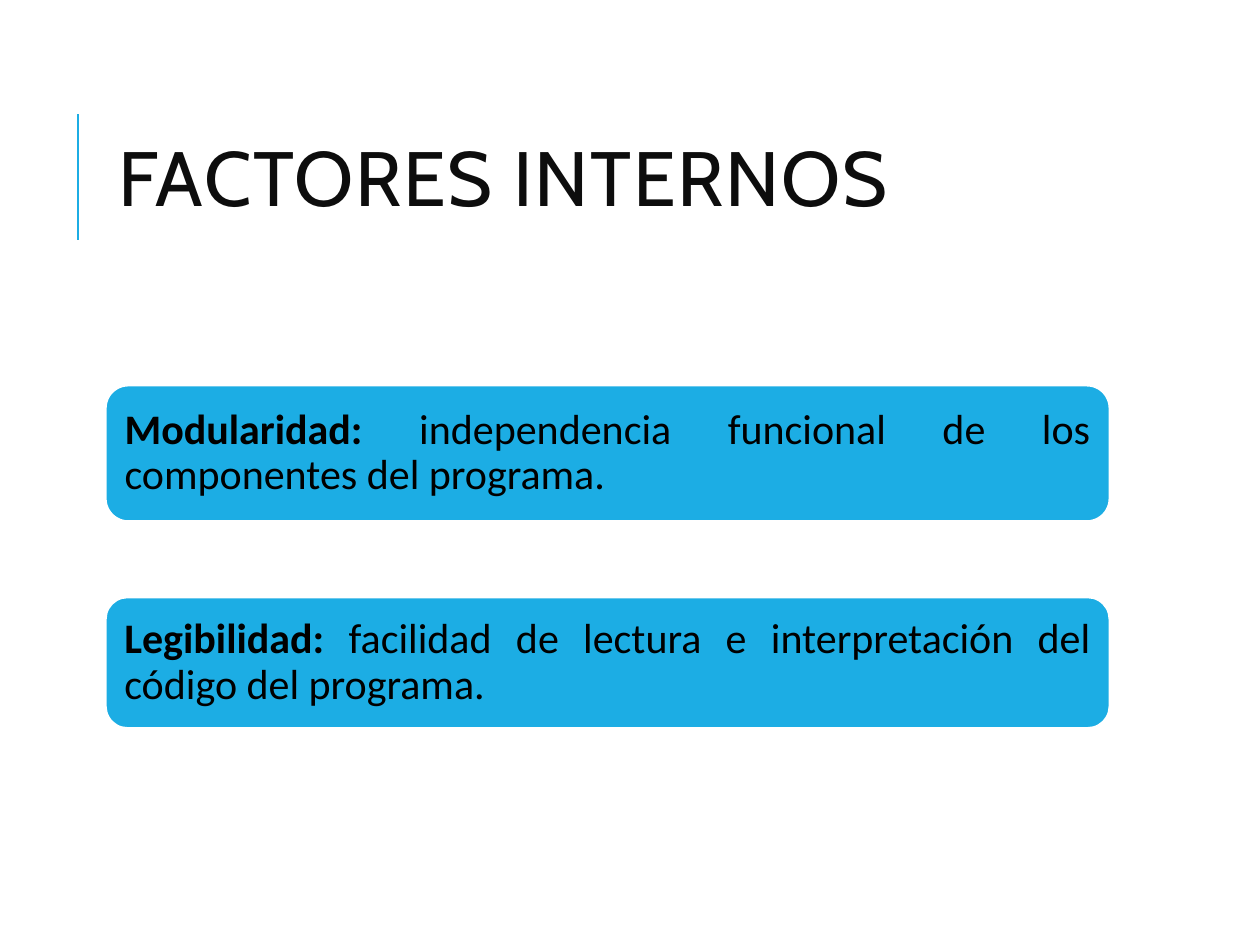
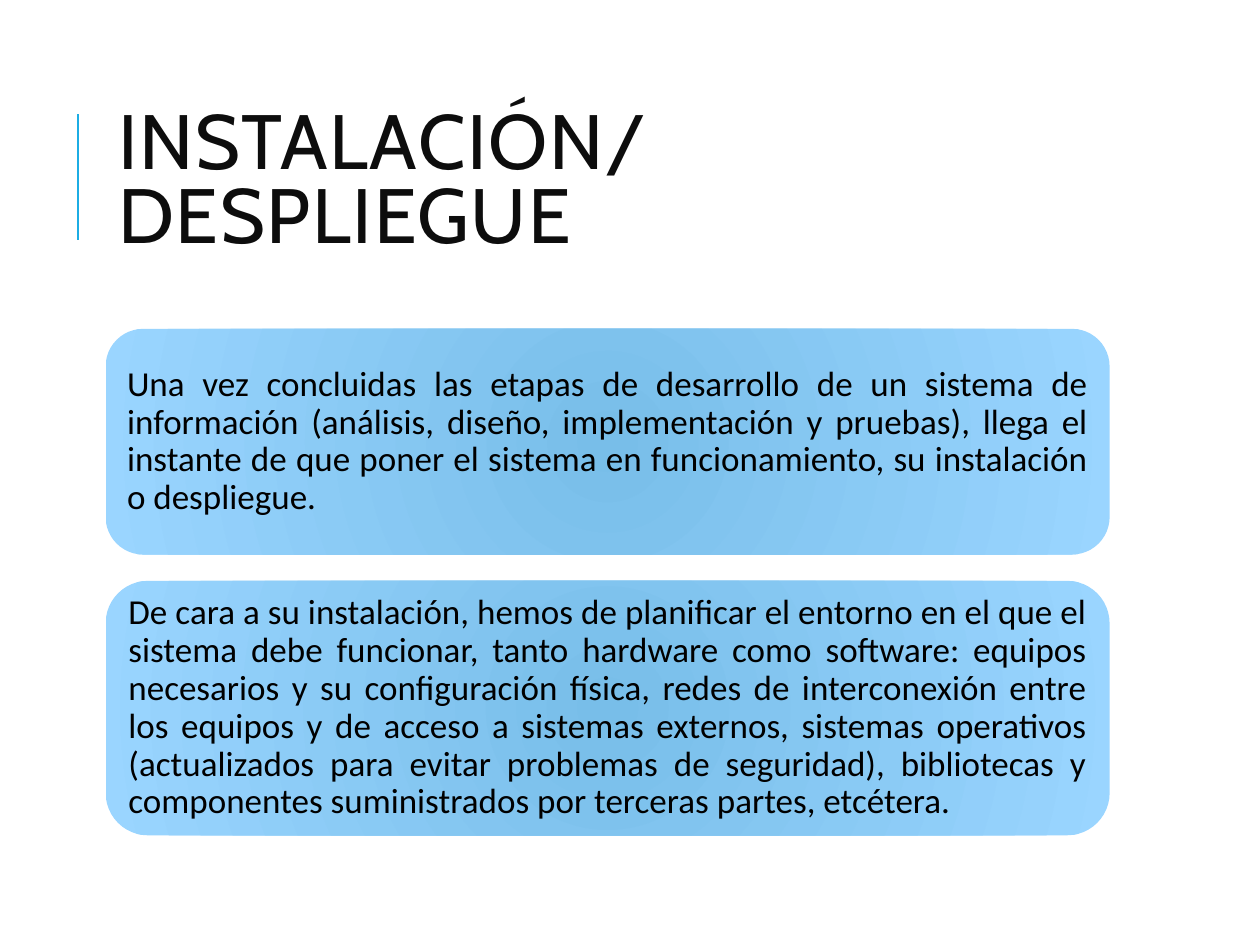
from lxml.etree import SubElement
from pptx import Presentation
from pptx.dml.color import RGBColor as RGB
from pptx.enum.shapes import MSO_CONNECTOR as CONN, MSO_SHAPE as SHAPE
from pptx.enum.text import MSO_ANCHOR as ANCHOR, PP_ALIGN as ALIGN
from pptx.oxml.ns import qn
from pptx.util import Cm, Pt

COLORS = {
    "accent": "1CADE4",
    "title": "0D0D0D",
    "text": "000000",
    "edge": "FFFFFF",
    "glow_center": "78BEE9",
    "glow_rim": "9AD5FF",
}
LEFT, WIDTH = 2.13, 20.24

FLAT = {"size": 24, "inset": 0.25, "glow": False}
GLOW = {"size": 20, "inset": 0.21, "glow": True}

SLIDES = [
    ("FACTORES INTERNOS", FLAT, [
        (7.77, 2.74, "Modularidad:",
         " independencia funcional de los componentes del programa."),
        (12.04, 2.64, "Legibilidad:",
         " facilidad de lectura e interpretación del código del programa."),
    ]),
    ("INSTALACIÓN/DESPLIEGUE", GLOW, [
        (6.63, 4.55, "",
         "Una vez concluidas las etapas de desarrollo de un sistema de "
         "información (análisis, diseño, implementación y pruebas), llega el "
         "instante de que poner el sistema en funcionamiento, su instalación "
         "o despliegue."),
        (11.71, 5.13, "",
         "De cara a su instalación, hemos de planificar el entorno en el que "
         "el sistema debe funcionar, tanto hardware como software: equipos "
         "necesarios y su configuración física, redes de interconexión entre "
         "los equipos y de acceso a sistemas externos, sistemas operativos "
         "(actualizados para evitar problemas de seguridad), bibliotecas y "
         "componentes suministrados por terceras partes, etcétera."),
    ]),
]


def color(name):
    return RGB.from_string(COLORS[name])


def apply(target, values):
    for name, value in values.items():
        setattr(target, name, value)


class Deck:
    def __init__(self):
        self.prs = Presentation()
        apply(self.prs, {"slide_width": Cm(25.4), "slide_height": Cm(19.05)})
        self.s = None

    def slide(self, title):
        self.s = self.prs.slides.add_slide(self.prs.slide_layouts[6])
        self.bar()
        self.title(title)

    def bar(self):
        line = self.s.shapes.add_connector(
            CONN.STRAIGHT, Cm(1.57), Cm(4.83), Cm(1.57), Cm(2.29))
        line.line.color.rgb = color("accent")
        line.line.width = Pt(1.5)
        SubElement(line._element.spPr, qn("a:effectLst"))

    def run(self, p, text, fill, **font):
        r = p.add_run()
        r.text = text
        apply(r.font, font)
        r.font.color.rgb = color(fill)
        return r

    def title(self, text):
        box = self.s.shapes.add_textbox(Cm(LEFT), Cm(1.63), Cm(WIDTH), Cm(4.17))
        tf = box.text_frame
        apply(tf, {"word_wrap": True, "vertical_anchor": ANCHOR.MIDDLE,
                   "margin_right": Cm(0.8)})
        p = tf.paragraphs[0]
        p.line_spacing = 0.8
        r = self.run(p, text, "title", name="Cabin", size=Pt(44))
        r.font._element.set("spc", "100")

    def glow(self, sp):
        sp.fill.gradient()
        for stop, name in zip(sp.fill.gradient_stops, ("glow_center", "glow_rim")):
            stop.color.rgb = color(name)
        grad = sp._element.spPr.find(qn("a:gradFill"))
        grad.remove(grad.find(qn("a:lin")))
        circle = SubElement(grad, qn("a:path"), path="circle")
        SubElement(circle, qn("a:fillToRect"), dict.fromkeys("ltrb", "100000"))
        sp.line.fill.background()

    def flat(self, sp):
        sp.fill.solid()
        sp.fill.fore_color.rgb = color("accent")
        sp.line.color.rgb = color("edge")
        sp.line.width = Pt(1.25)

    def card(self, style, top, height, term, text):
        sp = self.s.shapes.add_shape(
            SHAPE.ROUNDED_RECTANGLE, Cm(LEFT), Cm(top), Cm(WIDTH), Cm(height))
        sp.shadow.inherit = False
        if style["glow"]:
            self.glow(sp)
        else:
            self.flat(sp)
        tf = sp.text_frame
        apply(tf, {"word_wrap": True, "vertical_anchor": ANCHOR.MIDDLE})
        for side in ("left", "top", "right", "bottom"):
            setattr(tf, f"margin_{side}", Cm(style["inset"]))
        p = tf.paragraphs[0]
        apply(p, {"alignment": ALIGN.JUSTIFY, "line_spacing": 0.9})
        for part, bold in ((term, True), (text, False)):
            if part:
                self.run(p, part, "text", name="Calibri",
                         size=Pt(style["size"]), bold=bold)


def main():
    deck = Deck()
    for title, style, cards in SLIDES:
        deck.slide(title)
        for card in cards:
            deck.card(style, *card)
    deck.prs.save("out.pptx")


if __name__ == "__main__":
    main()
